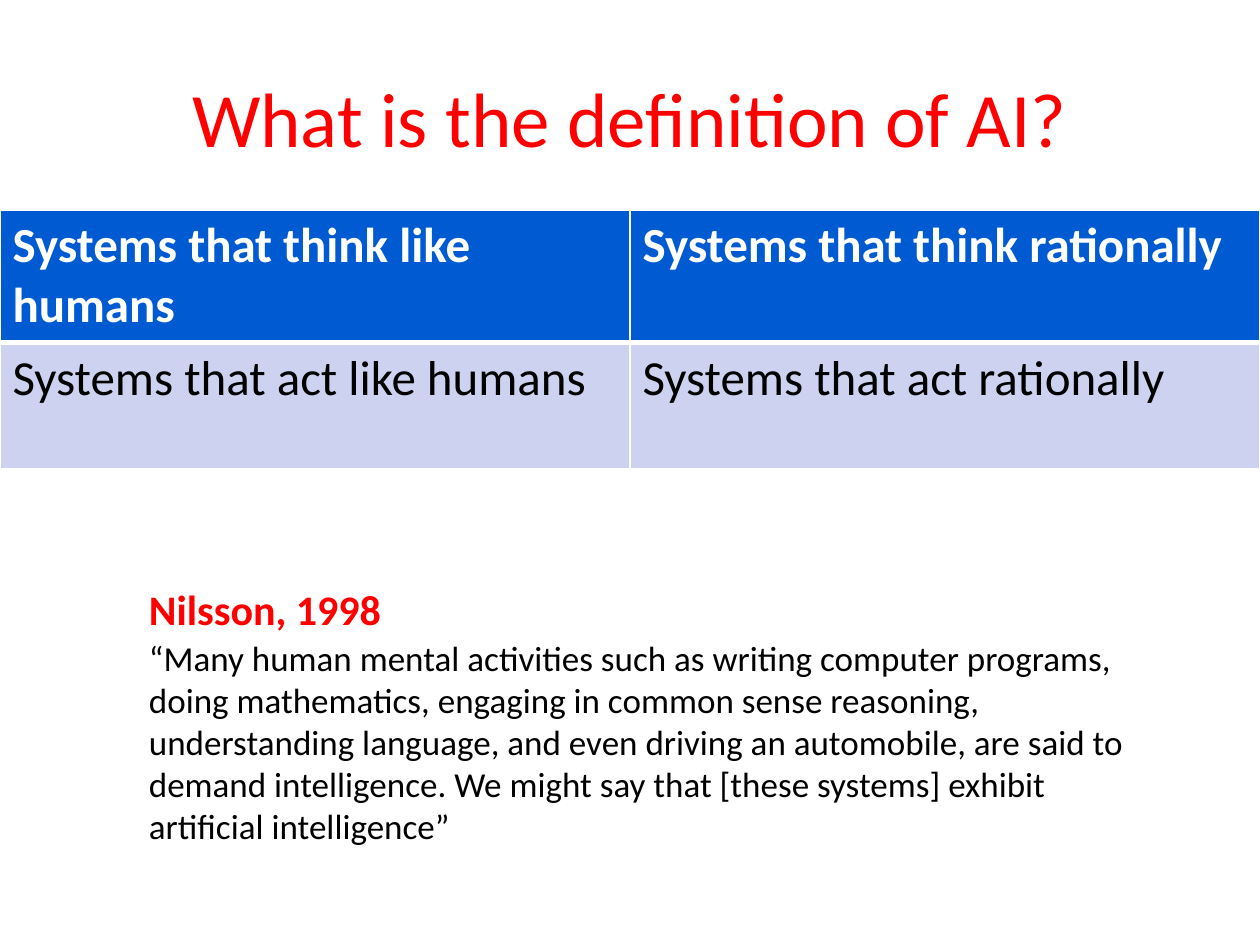
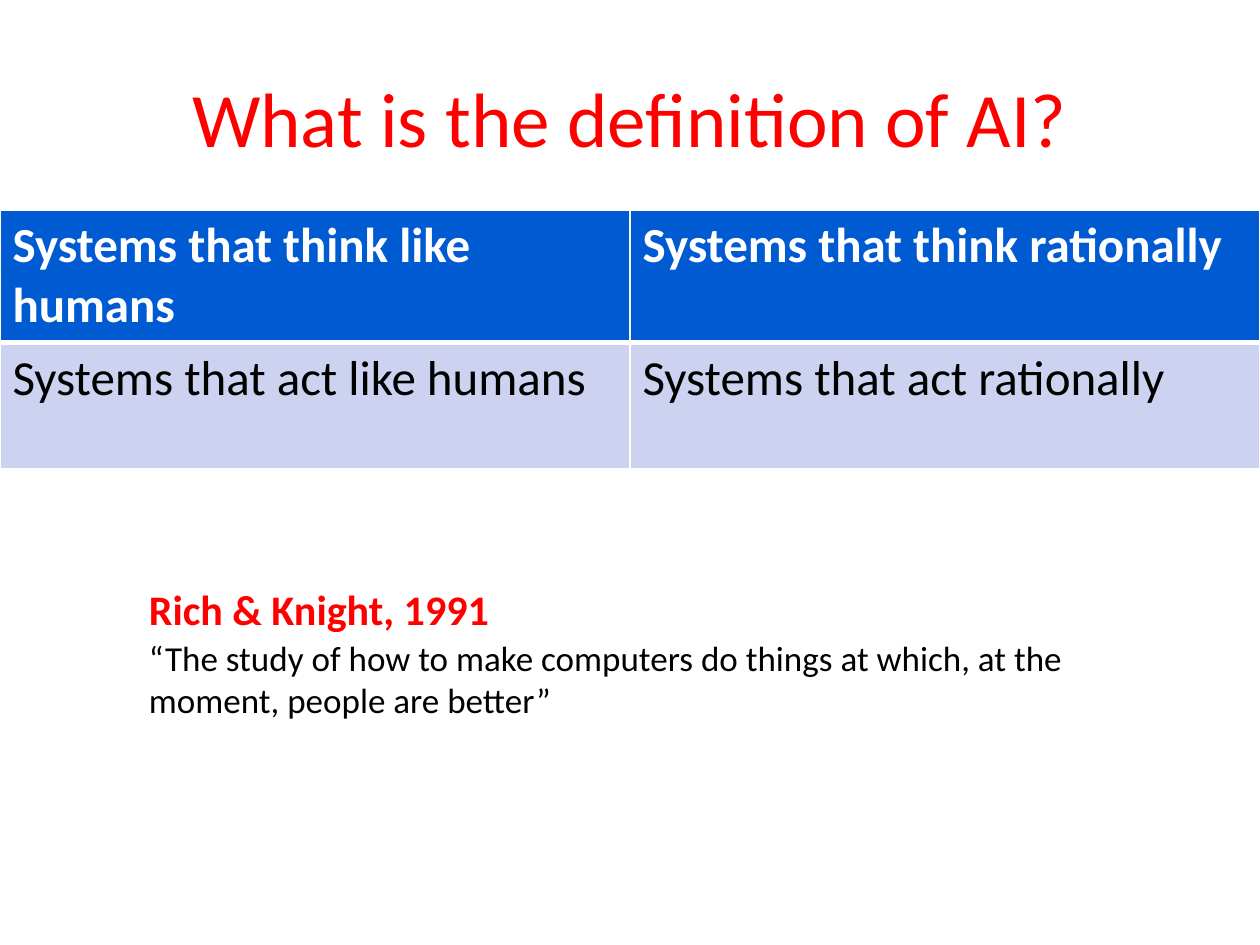
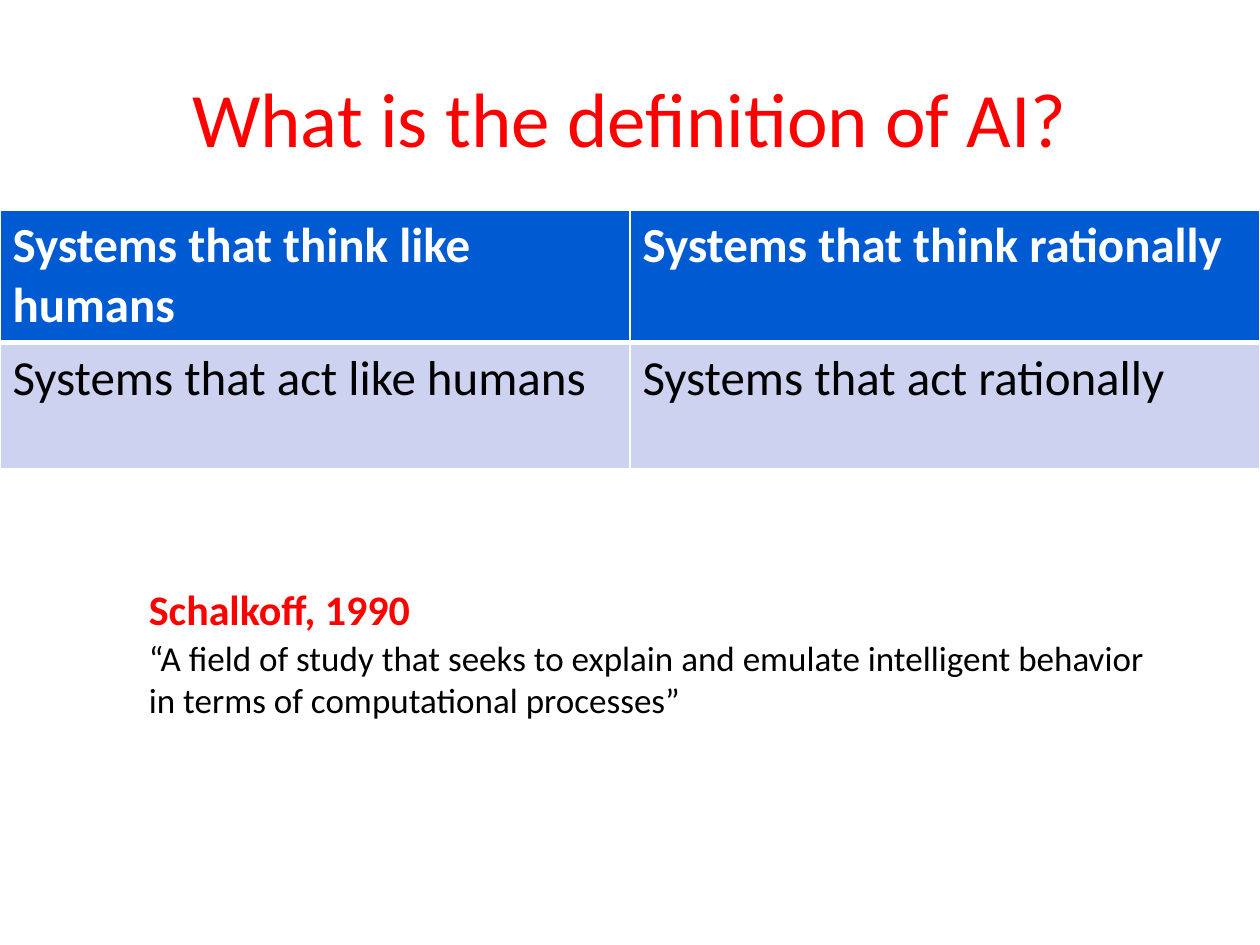
from lxml.etree import SubElement
from pptx import Presentation
from pptx.dml.color import RGBColor
from pptx.enum.text import MSO_ANCHOR, MSO_AUTO_SIZE, PP_ALIGN
from pptx.oxml.ns import qn
from pptx.util import Pt

RED = RGBColor(0xFF, 0x00, 0x00)
BLUE = RGBColor(0x00, 0x5B, 0xD3)
LAVENDER = RGBColor(0xCC, 0xD2, 0xEF)
WHITE = RGBColor(0xFF, 0xFF, 0xFF)
BLACK = RGBColor(0x00, 0x00, 0x00)
FONT = "Calibri"

SLIDE_WIDTH, SLIDE_HEIGHT = 720, 540
TITLE_ONLY_LAYOUT = 5
TITLE_BOX = (36, 21.6, 648, 90)
TABLE_BOX = (0, 120, SLIDE_WIDTH, 146)
QUOTE_BOX = (78, 330, 594)
THIN_RULE, HEADER_RULE = 1, 3

TITLE = "What is the definition of AI?"
APPROACHES = [
    ["Systems that think like humans", "Systems that think rationally"],
    ["Systems that act like humans", "Systems that act rationally"],
]
# Source, width of its label, quotation, height of the quotation
QUOTATIONS = [
    ("Nilsson, 1998", 148.3,
     "“Many human mental activities such as writing computer programs, doing "
     "mathematics, engaging in common sense reasoning, understanding language, "
     "and even driving an automobile, are said to demand intelligence. We might "
     "say that [these systems] exhibit artificial intelligence”", 128),
    ("Rich & Knight, 1991", 210.2,
     "“The study of how to make computers do things at which, at the moment, "
     "people are better”", 55.7),
    ("Schalkoff, 1990", 165.6,
     "“A field of study that seeks to explain and emulate intelligent behavior "
     "in terms of computational processes”", 55.7),
]


def add_run(paragraph, text, size, color, bold=False):
    run = paragraph.add_run()
    run.text = text
    run.font.name = FONT
    run.font.size = Pt(size)
    run.font.bold = bold
    run.font.color.rgb = color


def set_title(slide, box):
    title = slide.shapes.title
    title.left, title.top, title.width, title.height = map(Pt, box)
    frame = title.text_frame
    frame.vertical_anchor = MSO_ANCHOR.MIDDLE
    paragraph = frame.paragraphs[0]
    paragraph.alignment = PP_ALIGN.CENTER
    add_run(paragraph, TITLE, 44, RED)


def set_borders(cell, top, bottom):
    """Rule a cell in white; must run before the cell gets its fill."""
    properties = cell._tc.get_or_add_tcPr()
    widths = {"a:lnL": THIN_RULE, "a:lnR": THIN_RULE, "a:lnT": top, "a:lnB": bottom}
    for tag, width in widths.items():
        line = SubElement(properties, qn(tag), w=str(Pt(width)))
        fill = SubElement(line, qn("a:solidFill"))
        SubElement(fill, qn("a:srgbClr"), val=str(WHITE))


def add_approach_table(slide, box):
    row_count, column_count = len(APPROACHES), len(APPROACHES[0])
    table = slide.shapes.add_table(row_count, column_count, *map(Pt, box)).table
    for row, height in zip(table.rows, (70, 72)):
        row.height = Pt(height)
    for row_index, texts in enumerate(APPROACHES):
        is_header = row_index == 0
        for column_index, text in enumerate(texts):
            cell = table.cell(row_index, column_index)
            if is_header:
                set_borders(cell, THIN_RULE, HEADER_RULE)
            else:
                set_borders(cell, HEADER_RULE, THIN_RULE)
            cell.fill.solid()
            cell.fill.fore_color.rgb = BLUE if is_header else LAVENDER
            add_run(cell.text_frame.paragraphs[0], text, 28,
                    WHITE if is_header else BLACK, is_header)


def add_text(slide, box, text, size, color, bold=False, wrap=True):
    frame = slide.shapes.add_textbox(*map(Pt, box)).text_frame
    frame.word_wrap = wrap
    frame.auto_size = MSO_AUTO_SIZE.SHAPE_TO_FIT_TEXT
    add_run(frame.paragraphs[0], text, size, color, bold)


def add_quotation(slide, box, source, source_width, quotation, height):
    left, top, width = box
    add_text(slide, (left, top, source_width, 36), source, 24, RED, bold=True, wrap=False)
    add_text(slide, (left, top + 30, width, height), quotation, 20, BLACK)


def add_definition_slide(presentation, quotation):
    slide = presentation.slides.add_slide(presentation.slide_layouts[TITLE_ONLY_LAYOUT])
    set_title(slide, TITLE_BOX)
    add_approach_table(slide, TABLE_BOX)
    add_quotation(slide, QUOTE_BOX, *quotation)


def main():
    presentation = Presentation()
    presentation.slide_width = Pt(SLIDE_WIDTH)
    presentation.slide_height = Pt(SLIDE_HEIGHT)
    for quotation in QUOTATIONS:
        add_definition_slide(presentation, quotation)
    presentation.save("out.pptx")


if __name__ == "__main__":
    main()
